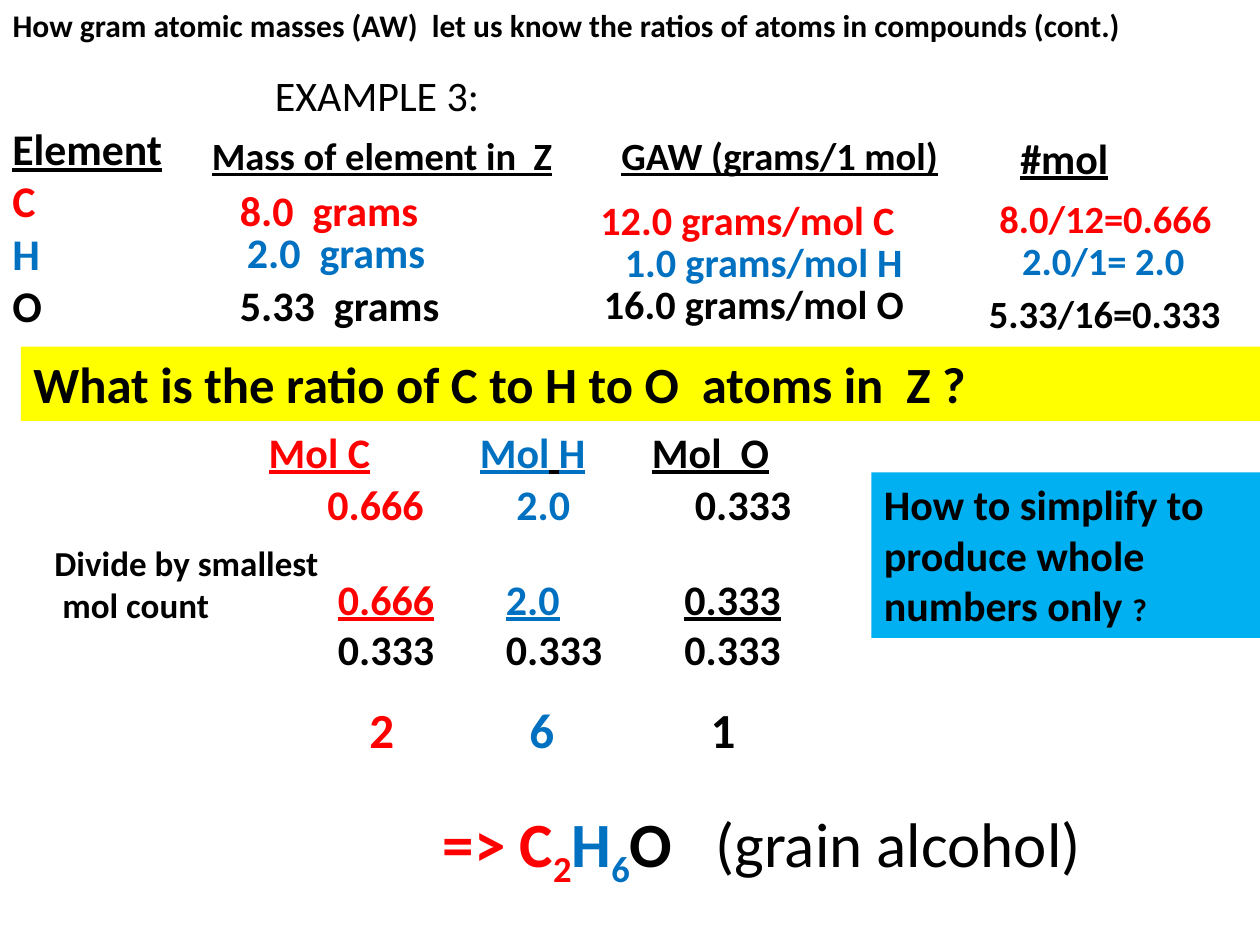
from dataclasses import dataclass

from pptx import Presentation
from pptx.dml.color import RGBColor
from pptx.enum.shapes import MSO_SHAPE
from pptx.enum.text import MSO_ANCHOR, MSO_AUTO_SIZE, PP_ALIGN
from pptx.oxml.ns import qn
from pptx.util import Pt
from lxml.etree import SubElement


@dataclass(frozen=True)
class Theme:
    font: str = "Calibri"
    black: str = "000000"
    white: str = "FFFFFF"
    carbon: str = "FF0000"
    hydrogen: str = "0070C0"
    oxygen: str = "000000"
    question: str = "FFFF00"
    hint: str = "00B0F0"
    title: int = 18
    note: int = 20
    column: int = 22
    molar: int = 23
    body: int = 24
    element: int = 25
    result: int = 28
    banner: int = 29
    formula: int = 36


THEME = Theme()
ELEMENT_COLORS = (THEME.carbon, THEME.hydrogen, THEME.oxygen)


def span(text, **style):
    """Pair a text with its format: size, color, bold, underline, baseline."""
    return text, style


class SlideBuilder:
    def __init__(self, page, theme):
        self.page = page
        self.theme = theme

    def add_span(self, para, text, size=THEME.body, color=THEME.black,
                 bold=True, underline=False, baseline=0):
        run = para.add_run()
        run.text = text
        font = run.font
        font.name = self.theme.font
        font.size = Pt(size)
        font.bold = bold
        font.underline = underline
        font.color.rgb = RGBColor.from_string(color)
        if baseline:
            run._r.get_or_add_rPr().set("baseline", str(baseline * 1000))

    def fill_text(self, box, lines, tabs=(), **style):
        """Fill a box with lines; each line is a string or a list of spans."""
        frame = box.text_frame
        frame.word_wrap = True
        frame.auto_size = MSO_AUTO_SIZE.NONE
        frame.vertical_anchor = MSO_ANCHOR.TOP
        for index, line in enumerate(lines):
            para = frame.add_paragraph() if index else frame.paragraphs[0]
            para.alignment = PP_ALIGN.LEFT
            if tabs:
                tab_list = SubElement(para._p.get_or_add_pPr(), qn("a:tabLst"))
                for position in tabs:
                    SubElement(tab_list, qn("a:tab"), pos=str(Pt(position)), algn="l")
            for text, own in [span(line)] if isinstance(line, str) else line:
                self.add_span(para, text, **{**style, **own})

    def title(self, text, left, top, width, height, **style):
        box = self.page.shapes.title
        box.left, box.top = Pt(left), Pt(top)
        box.width, box.height = Pt(width), Pt(height)
        self.fill_text(box, [text], **style)

    def text(self, lines, left, top, width, height, **style):
        box = self.page.shapes.add_textbox(Pt(left), Pt(top), Pt(width), Pt(height))
        self.fill_text(box, lines, **style)

    def panel(self, lines, left, top, width, height, fill, **style):
        box = self.page.shapes.add_shape(
            MSO_SHAPE.RECTANGLE, Pt(left), Pt(top), Pt(width), Pt(height))
        box.shadow.inherit = False
        box.fill.solid()
        box.fill.fore_color.rgb = RGBColor.from_string(fill)
        box.line.fill.background()
        self.fill_text(box, lines, **style)


def add_data_columns(slide):
    theme = slide.theme
    slide.text(
        [[span("Element", underline=True)],
         *([span(symbol, color=color)] for symbol, color in zip("CHO", ELEMENT_COLORS))],
        0, 66, 126, 128, size=theme.element)
    slide.text(["Mass of element in  Z"], 114, 72, 282, 34,
               size=theme.column, underline=True)
    slide.text(["GAW (grams/1 mol)"], 348, 72, 222, 34,
               size=theme.column, underline=True)
    slide.panel(["#mol"], 576, 72, 108, 36, theme.white, underline=True)

    # Each column: type size, box width, then text, left and top per element.
    columns = (
        (theme.body, 150, (("8.0  grams", 130, 102), ("2.0  grams", 134, 126),
                           ("5.33  grams", 130, 156))),
        (theme.molar, 210, (("12.0 grams/mol C", 336, 108), ("1.0 grams/mol H", 350, 132),
                            ("16.0 grams/mol O", 338, 156))),
        (theme.column, 162, (("8.0/12=0.666", 564, 108), ("2.0/1= 2.0", 577, 132),
                             ("5.33/16=0.333", 558, 162))),
    )
    for size, width, entries in columns:
        for (text, left, top), color in zip(entries, ELEMENT_COLORS):
            slide.text([text], left, top, width, 36, size=size, color=color)


def add_mole_ratio(slide):
    theme = slide.theme
    blue = theme.hydrogen
    slide.text(
        [[span("Mol C", color=theme.carbon), span("\t", underline=False), span("\t"),
          span("Mol", color=blue), span(" "), span("H\t", color=blue), span("Mol  O")]],
        146.5, 240, 327, 36, tabs=(93, 120.6, 219), underline=True)

    moles = ("0.666", "2.0", "0.333")
    for amount, color, left, ratio_left in zip(
            moles, ELEMENT_COLORS, (180, 288, 390), (186, 282, 384)):
        slide.text([amount], left, 270, 84, 36, color=color)
        slide.text([[span(amount, color=color, underline=True)], moles[-1]],
                   ratio_left, 324, 87, 66)

    slide.text(["Divide by smallest  mol count"], 24, 306, 168, 55, size=theme.note)
    slide.text(
        [[span("2\t", color=theme.carbon), span("6\t", color=blue), span("1")]],
        204, 396, 258, 41, tabs=(91.5, 195), size=theme.result)


def add_formula(slide):
    theme = slide.theme
    red, blue = theme.carbon, theme.hydrogen
    slide.text(
        [[span("=> C", color=red), span("2", color=red, baseline=-25),
          span("H", color=blue), span("6", color=blue, baseline=-25),
          span("O "), span("  (grain alcohol)", bold=False)]],
        246, 456, 444, 51, size=theme.formula)


def main():
    deck = Presentation()
    deck.slide_width, deck.slide_height = Pt(720), Pt(540)
    slide = SlideBuilder(deck.slides.add_slide(deck.slide_layouts[5]), THEME)

    slide.title("How gram atomic masses (AW)  let us know the ratios of atoms "
                "in compounds (cont.)", 0, 0, 684, 29, size=THEME.title)
    slide.text(["EXAMPLE 3:"], 150, 36, 162, 36, bold=False)
    add_data_columns(slide)
    slide.panel(["What is the ratio of C to H to O  atoms in  Z ?"],
                12, 198, 708, 42.5, THEME.question, size=THEME.banner)
    add_mole_ratio(slide)
    slide.panel([[span("How to simplify to produce whole numbers only "),
                  span("?", size=THEME.title)]],
                498, 270, 222, 94.5, THEME.hint)
    add_formula(slide)
    deck.save("out.pptx")


if __name__ == "__main__":
    main()
